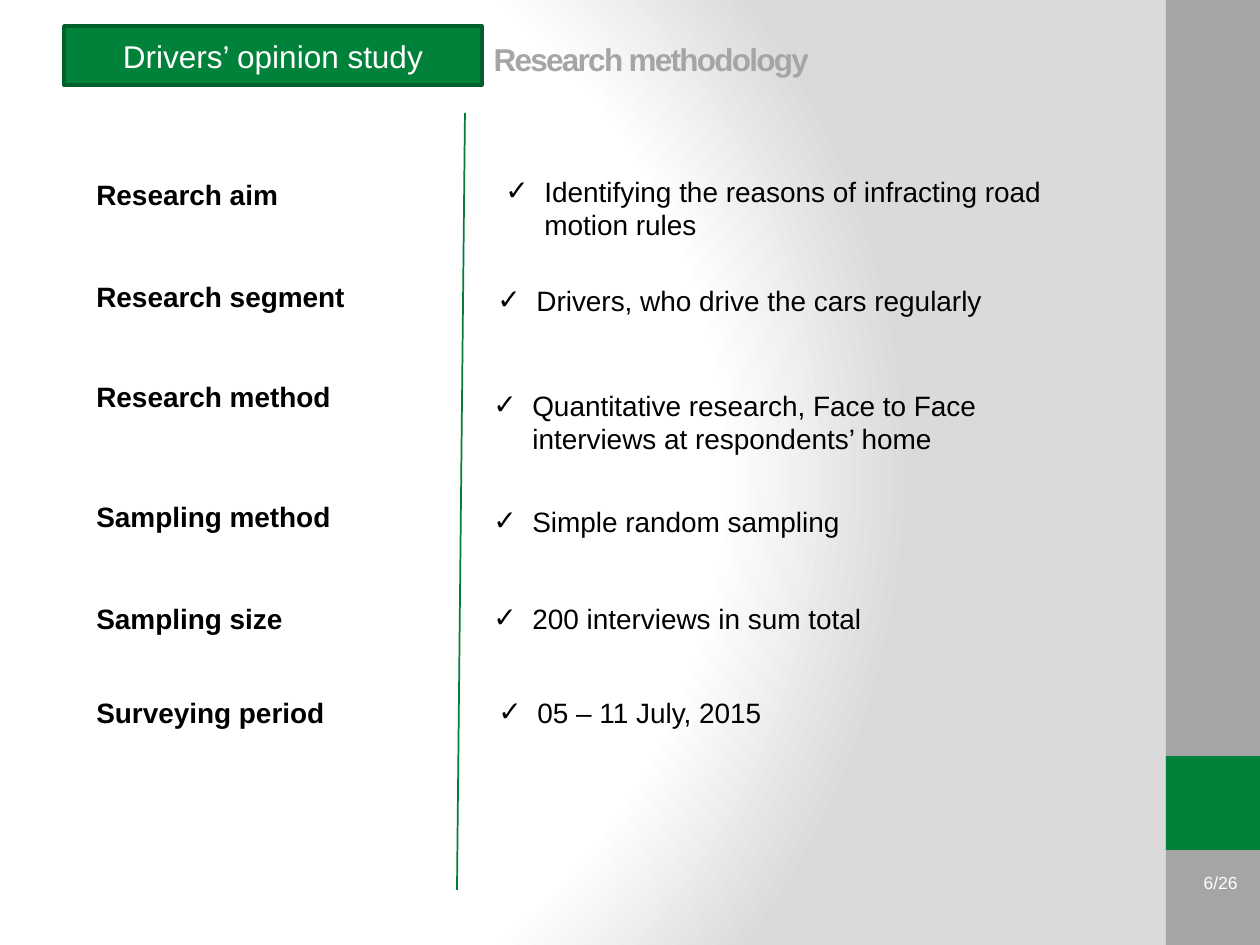
from collections import namedtuple

from pptx import Presentation
from pptx.dml.color import RGBColor
from pptx.enum.shapes import MSO_CONNECTOR, MSO_SHAPE
from pptx.enum.text import MSO_ANCHOR as Anchor, MSO_AUTO_SIZE as AutoSize, PP_ALIGN as Align
from pptx.oxml import parse_xml
from pptx.oxml.ns import nsdecls
from pptx.oxml.xmlchemy import OxmlElement
from pptx.util import Emu, Pt

EMU_PER_PX = 914400 / 126
FONT = "Arial"
BLACK = RGBColor(0x00, 0x00, 0x00)
WHITE = RGBColor(0xFF, 0xFF, 0xFF)
GRAY = RGBColor(0xA5, 0xA5, 0xA5)
GREEN = RGBColor(0x00, 0x82, 0x3B)
DARK_GREEN = RGBColor(0x00, 0x60, 0x2C)
DIVIDER_GREEN = RGBColor(0x00, 0x7F, 0x3A)

BACKGROUND = f"""<p:bg {nsdecls('p', 'a')}><p:bgPr><a:gradFill rotWithShape="1"><a:gsLst>
<a:gs pos="0"><a:srgbClr val="FFFFFF"/></a:gs>
<a:gs pos="75000"><a:srgbClr val="FFFFFF"/></a:gs>
<a:gs pos="100000"><a:srgbClr val="DADADA"/></a:gs></a:gsLst>
<a:path path="circle"><a:fillToRect l="20000" t="50000" r="100000" b="50000"/></a:path>
</a:gradFill><a:effectLst/></p:bgPr></p:bg>"""

LABEL_LEFT = 84
LINE_HEIGHT = 47
TWO_LINES = 81

Topic = namedtuple("Topic", "label label_top label_width answer left top width height")
TOPICS = [
    Topic("Research aim", 171, 275,
          "Identifying the reasons of infracting road motion rules", 493, 168, 604, TWO_LINES),
    Topic("Research segment", 273, 275,
          "Drivers, who drive the cars regularly", 485, 277, 611, LINE_HEIGHT),
    Topic("Research method", 373, 275,
          "Quantitative research, Face to Face interviews at respondents’ home",
          481, 382, 615, TWO_LINES),
    Topic("Sampling method", 493, 275,
          "Simple random sampling", 481, 498, 570, LINE_HEIGHT),
    Topic("Sampling size", 595, 275,
          "200 interviews in sum total", 481, 595, 570, LINE_HEIGHT),
    Topic("Surveying period", 689, 328,
          "05 – 11 July, 2015", 486, 689, 486, TWO_LINES),
]


def px(length):
    return Emu(round(length * EMU_PER_PX))


def add_check_bullet(paragraph):
    properties = paragraph._p.get_or_add_pPr()
    properties.set("marL", str(px(39)))
    properties.set("indent", str(px(-39)))
    typeface = OxmlElement("a:buFont")
    typeface.set("typeface", FONT)
    check = OxmlElement("a:buChar")
    check.set("char", "✓")
    properties.extend([typeface, check])


def write(shape, text, size=16, color=BLACK, bold=False, align=Align.LEFT,
          anchor=Anchor.TOP, fit=AutoSize.NONE, bullet=False, spacing=0):
    """Fill a shape with one formatted paragraph; spacing is in points."""
    frame = shape.text_frame
    frame.word_wrap = True
    frame.auto_size = fit
    frame.vertical_anchor = anchor
    paragraph = frame.paragraphs[0]
    paragraph.alignment = align
    if bullet:
        add_check_bullet(paragraph)
    run = paragraph.add_run()
    run.text = text
    run.font.name = FONT
    run.font.size = Pt(size)
    run.font.bold = bold
    run.font.color.rgb = color
    if spacing:
        run.font._element.set("spc", str(spacing * 100))


def add_text(slide, left, top, width, height, text, **style):
    box = slide.shapes.add_textbox(px(left), px(top), px(width), px(height))
    write(box, text, **style)


def add_block(slide, left, top, width, height, fill, outline=None):
    block = slide.shapes.add_shape(
        MSO_SHAPE.RECTANGLE, px(left), px(top), px(width), px(height))
    block.shadow.inherit = False
    block.fill.solid()
    block.fill.fore_color.rgb = fill
    if outline is None:
        block.line.fill.background()
    else:
        block.line.color.rgb = outline
        block.line.width = Pt(2)
    return block


def add_divider(slide, start, end):
    divider = slide.shapes.add_connector(
        MSO_CONNECTOR.STRAIGHT, *map(px, start), *map(px, end))
    divider.line.color.rgb = DIVIDER_GREEN
    divider.line.width = Pt(1)
    divider._element.spPr.append(OxmlElement("a:effectLst"))


def add_title(slide, left, top, width, height, text, **style):
    title = slide.shapes.title
    title.left, title.top = px(left), px(top)
    title.width, title.height = px(width), px(height)
    write(title, text, **style)


def add_topic(slide, topic):
    add_text(slide, LABEL_LEFT, topic.label_top, topic.label_width, LINE_HEIGHT,
             topic.label, bold=True, fit=AutoSize.SHAPE_TO_FIT_TEXT)
    add_text(slide, topic.left, topic.top, topic.width, topic.height,
             topic.answer, bullet=True, fit=AutoSize.SHAPE_TO_FIT_TEXT)


def main():
    deck = Presentation()
    deck.slide_width, deck.slide_height = px(1260), px(945)
    slide = deck.slides.add_slide(deck.slide_layouts[5])
    slide.element.cSld.insert(0, parse_xml(BACKGROUND))

    add_block(slide, 1166, 0, 94, 945, GRAY)
    add_block(slide, 1166, 756, 94, 94, GREEN)
    add_text(slide, 1176, 856, 74, 53, "6/26", size=10, color=WHITE,
             align=Align.RIGHT, anchor=Anchor.MIDDLE)

    study = add_block(slide, 64, 26, 418, 59, GREEN, outline=DARK_GREEN)
    write(study, "Drivers’ opinion study", size=18, color=WHITE,
          align=Align.CENTER, anchor=Anchor.MIDDLE)
    add_title(slide, 481, 20, 645, 77, "Research methodology", size=18, color=GRAY,
              bold=True, anchor=Anchor.MIDDLE, spacing=-1)

    add_divider(slide, (465, 113), (457, 890))
    for topic in TOPICS:
        add_topic(slide, topic)
    deck.save("out.pptx")


if __name__ == "__main__":
    main()
